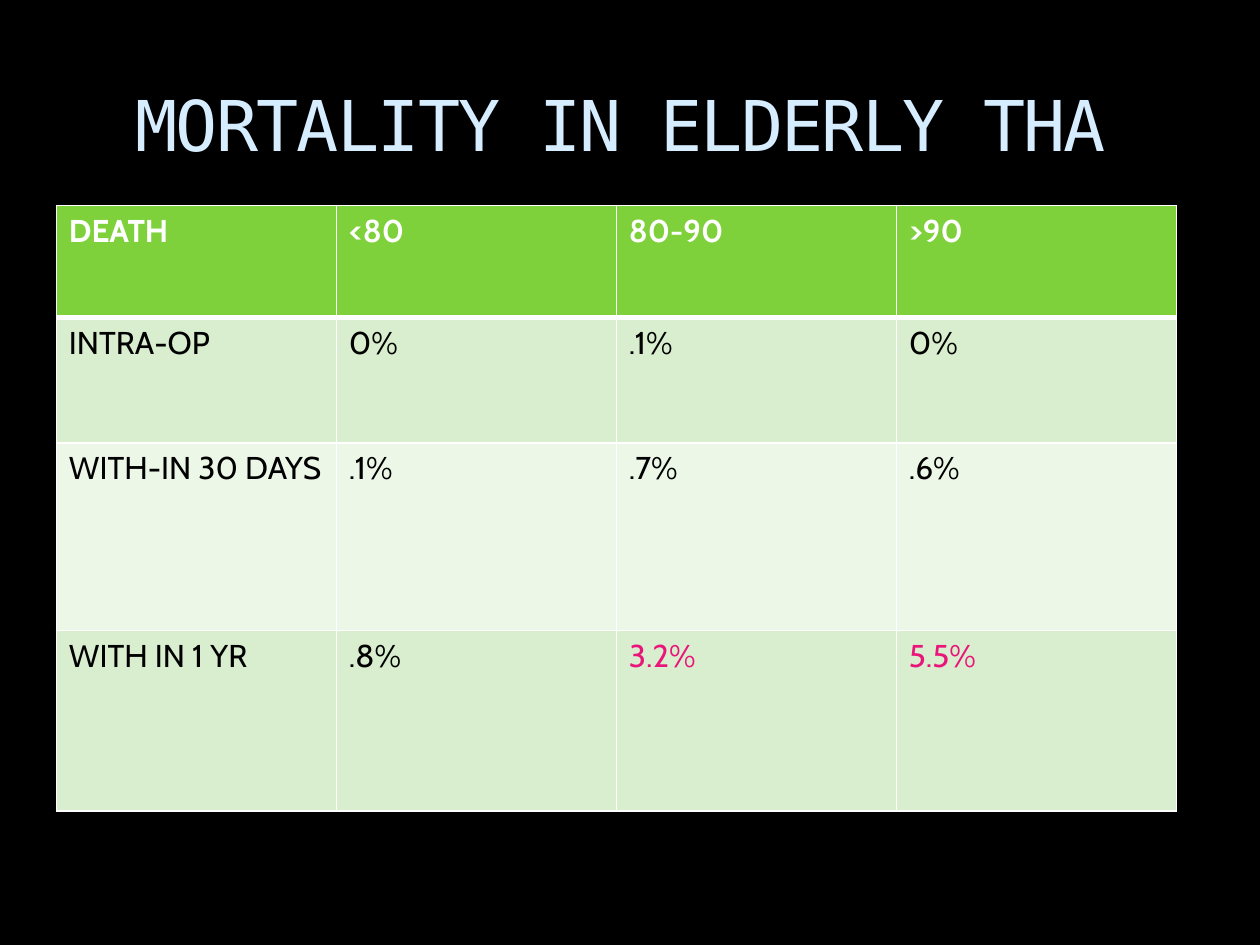
"""Build the slide on mortality in elderly THA patients."""
from dataclasses import dataclass

from lxml.etree import SubElement as Sub
from pptx import Presentation as Deck
from pptx.dml.color import RGBColor as Color
from pptx.enum.text import MSO_ANCHOR as Anchor, PP_ALIGN as Align
from pptx.oxml.ns import qn
from pptx.util import Pt


@dataclass(frozen=True)
class Theme:
    back: str = "000000"
    title: str = "D6ECFF"
    head: str = "7FD13B"
    bands: tuple = ("D8EECE", "ECF7E8")
    rule: str = "FFFFFF"
    light: str = "FFFFFF"
    dark: str = "000000"
    alert: str = "EA157A"
    mono: str = "DejaVu Sans Mono"
    sans: str = "Cabin"
    big: int = 40
    body: int = 18
    thin: int = 1
    thick: int = 3


class Page:
    def __init__(self, deck, theme):
        self.theme = theme
        self.slide = deck.slides.add_slide(deck.slide_layouts[6])
        self.paint(self.slide.background.fill, theme.back)

    def paint(self, fill, color):
        fill.solid()
        fill.fore_color.rgb = Color.from_string(color)

    def label(self, frame, text, color, **form):
        para = frame.paragraphs[0]
        para.alignment = Align.LEFT
        run = para.add_run()
        run.text = text
        for key, value in form.items():
            setattr(run.font, key, value)
        run.font.color.rgb = Color.from_string(color)
        return run

    def title(self, text, left, top, width, height):
        box = self.slide.shapes.add_textbox(Pt(left), Pt(top), Pt(width), Pt(height))
        form = {"word_wrap": True, "vertical_anchor": Anchor.TOP,
                "margin_left": Pt(5.5), "margin_top": Pt(6.5)}
        for key, value in form.items():
            setattr(box.text_frame, key, value)
        theme = self.theme
        run = self.label(box.text_frame, text, theme.title,
                         name=theme.mono, size=Pt(theme.big))
        run._r.get_or_add_rPr().set("spc", "-100")

    def edge(self, cell, side, width):
        props = cell._tc.get_or_add_tcPr()
        line = Sub(props, qn(f"a:ln{side}"), w=str(Pt(width)))
        fill = Sub(line, qn("a:solidFill"))
        Sub(fill, qn("a:srgbClr"), val=self.theme.rule)

    def cell(self, cell, text, fill, ink, bold, sides):
        for side, width in sides.items():
            self.edge(cell, side, width)
        self.paint(cell.fill, fill)
        self.label(cell.text_frame, text, ink, name=self.theme.sans,
                   size=Pt(self.theme.body), bold=bold)

    def table(self, rows, left, top, wide, highs, alerts):
        theme = self.theme
        count = len(rows[0])
        grid = self.slide.shapes.add_table(
            len(rows), count, Pt(left), Pt(top), Pt(wide * count), Pt(sum(highs))).table
        for col in grid.columns:
            col.width = Pt(wide)
        for r, (row, high) in enumerate(zip(rows, highs)):
            grid.rows[r].height = Pt(high)
            head = r == 0
            fill = theme.head if head else theme.bands[(r - 1) % 2]
            sides = dict.fromkeys("LRTB", theme.thin)
            if head:
                sides["B"] = theme.thick
            elif r == 1:
                sides["T"] = theme.thick
            for c, text in enumerate(row):
                ink = theme.light if head else theme.dark
                if (r, c) in alerts:
                    ink = theme.alert
                self.cell(grid.cell(r, c), text, fill, ink, head, sides)


def main():
    deck = Deck()
    deck.slide_width, deck.slide_height = Pt(720), Pt(540)
    page = Page(deck, Theme())
    page.title("MORTALITY IN ELDERLY THA", 72, 40.3, 612, 72)
    rows = [
        ("DEATH", "<80", "80-90", ">90"),
        ("INTRA-OP", "0%", ".1%", "0%"),
        ("WITH-IN 30 DAYS", ".1%", ".7%", ".6%"),
        ("WITH IN 1 YR", ".8%", "3.2%", "5.5%"),
    ]
    page.table(rows, 32.2, 117.4, 160, (64.2, 71.5, 107.3, 103.2), {(3, 2), (3, 3)})
    deck.save("out.pptx")


if __name__ == "__main__":
    main()
